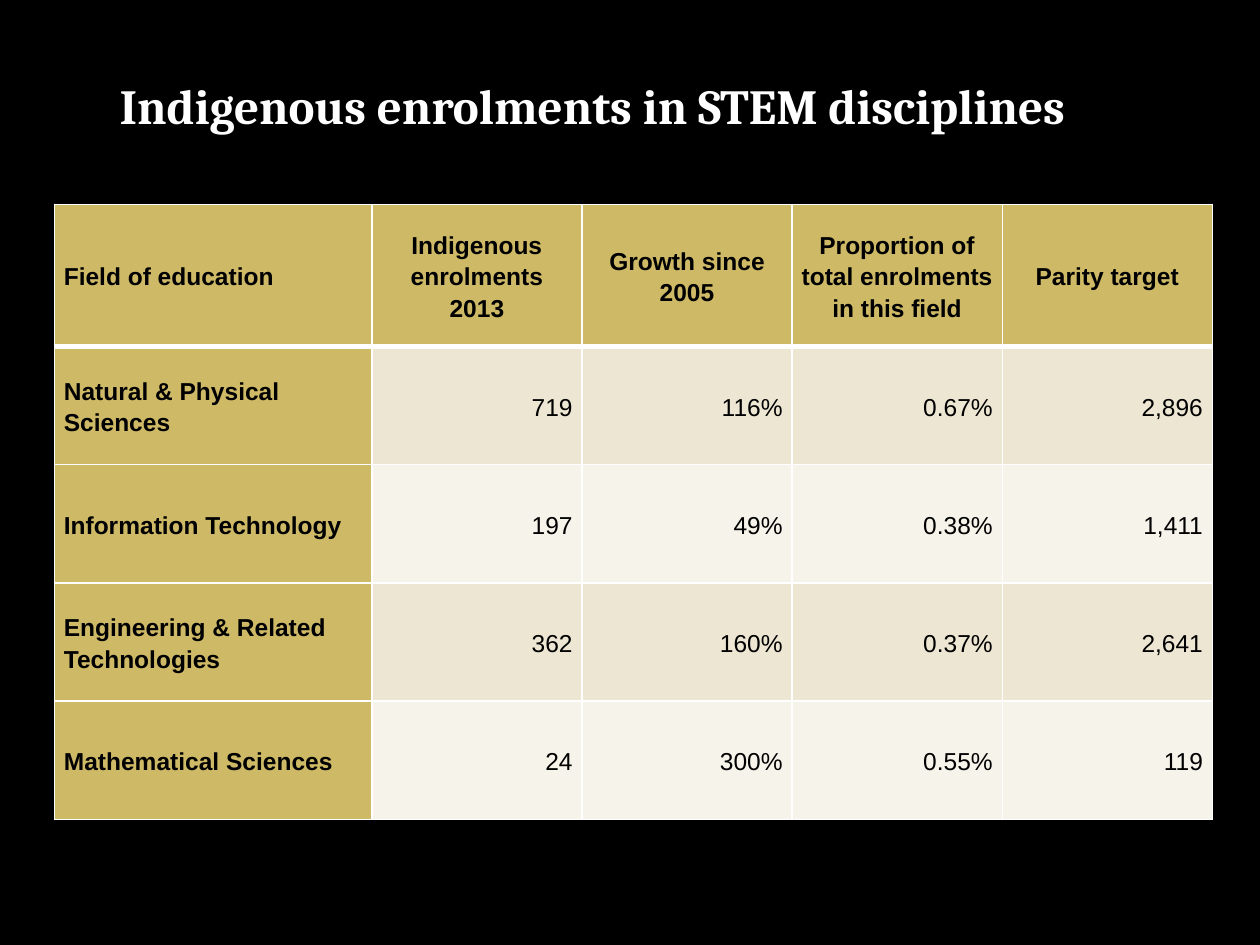
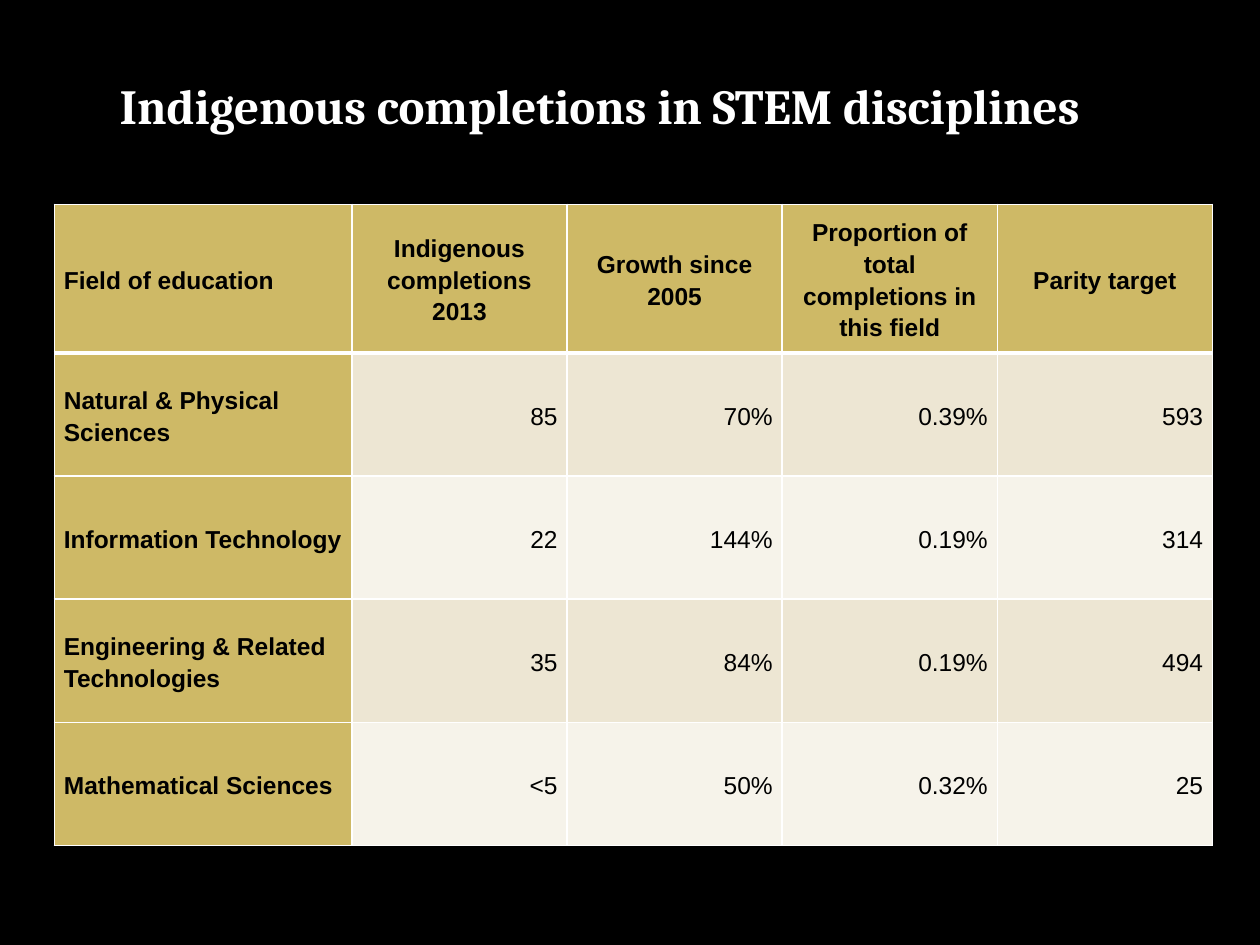
"""Build two table slides on Indigenous students in STEM disciplines."""
from lxml.etree import fromstring
from pptx import Presentation as Deck
from pptx.dml.color import RGBColor as Rgb
from pptx.enum.text import MSO_ANCHOR as Anchor, PP_ALIGN as Align
from pptx.util import Pt

BLACK, WHITE, GOLD = "000000", "FFFFFF", "CEB966"
BANDS = "EDE6D3", "F6F3EA"
NS = "http://schemas.openxmlformats.org/drawingml/2006/main"
TITLE = {"name": "Cambria", "size": Pt(28), "bold": True}
HEAD = {"name": "Arial", "size": Pt(14), "bold": True}
VALUE = {**HEAD, "bold": False}
CELL = {"margin_left": Pt(5.4), "margin_right": Pt(5.4), "margin_top": 0,
        "margin_bottom": 0, "vertical_anchor": Anchor.MIDDLE}
LABEL = {"alignment": Align.LEFT, "line_spacing": 1.15}
CENTRE = {**LABEL, "alignment": Align.CENTER}
NUMBER = {**LABEL, "alignment": Align.RIGHT, "space_before": Pt(3), "space_after": Pt(3)}
EDGES = {"lnL": 1, "lnR": 1, "lnT": 1, "lnB": 3}
FIELDS = ["Natural & Physical Sciences", "Information Technology",
          "Engineering & Related Technologies", "Mathematical Sciences"]

PAGES = [
    {"topic": "enrolments", "count": "Indigenous enrolments 2013",
     "widths": [181.4] + [120.1] * 4, "heights": [81.2] + [67.55] * 4,
     "data": [["719", "116%", "0.67%", "2,896"],
              ["197", "49%", "0.38%", "1,411"],
              ["362", "160%", "0.37%", "2,641"],
              ["24", "300%", "0.55%", "119"]]},
    {"topic": "completions", "count": "Indigenous completions\n2013",
     "widths": [170] + [122.95] * 4, "heights": [85] + [70.35] * 4,
     "data": [["85", "70%", "0.39%", "593"],
              ["22", "144%", "0.19%", "314"],
              ["35", "84%", "0.19%", "494"],
              ["<5", "50%", "0.32%", "25"]]},
]


def paint(fill, tint):
    fill.solid()
    fill.fore_color.rgb = Rgb.from_string(tint)


def style(item, form):
    for key, value in form.items():
        setattr(item, key, value)


deck = Deck()
deck.slide_width, deck.slide_height = Pt(720), Pt(540)
paint(deck.slide_master.background.fill, BLACK)

for page in PAGES:
    slide = deck.slides.add_slide(deck.slide_layouts[5])
    title = slide.shapes.title
    style(title, {"left": Pt(61.2), "top": Pt(15.2), "width": Pt(616.3), "height": Pt(90)})
    title.text = f"Indigenous {page['topic']} in STEM disciplines"
    title.text_frame.vertical_anchor = Anchor.MIDDLE
    line = title.text_frame.paragraphs[0]
    line.alignment = Align.LEFT
    style(line.runs[0].font, TITLE)
    paint(line.runs[0].font.fill, WHITE)

    heads = ["Field of education", page["count"], "Growth since 2005",
             f"Proportion of total {page['topic']} in this field", "Parity target"]
    rows = [heads] + [[field, *data] for field, data in zip(FIELDS, page["data"])]
    wide, high = page["widths"], page["heights"]
    grid = slide.shapes.add_table(len(rows), len(heads), Pt(31.1), Pt(116.8),
                                  Pt(sum(wide)), Pt(sum(high))).table
    grid.first_col = True
    for col, width in zip(grid.columns, wide):
        col.width = Pt(width)
    for row, height in zip(grid.rows, high):
        row.height = Pt(height)

    for r, row in enumerate(rows):
        for c, text in enumerate(row):
            cell = grid.cell(r, c)
            cell.text = text
            style(cell, CELL)
            head = r == 0 or c == 0
            paint(cell.fill, GOLD if head else BANDS[(r - 1) % 2])
            for line in cell.text_frame.paragraphs:
                style(line, LABEL if c == 0 else CENTRE if r == 0 else NUMBER)
                font = line.runs[0].font
                style(font, HEAD if head else VALUE)
                paint(font.fill, BLACK)
            if r == 0:
                props = cell._tc.get_or_add_tcPr()
                for i, (edge, size) in enumerate(EDGES.items()):
                    props.insert(i, fromstring(
                        f'<a:{edge} xmlns:a="{NS}" w="{Pt(size)}"><a:solidFill>'
                        f'<a:srgbClr val="{WHITE}"/></a:solidFill></a:{edge}>'))

deck.save("out.pptx")
